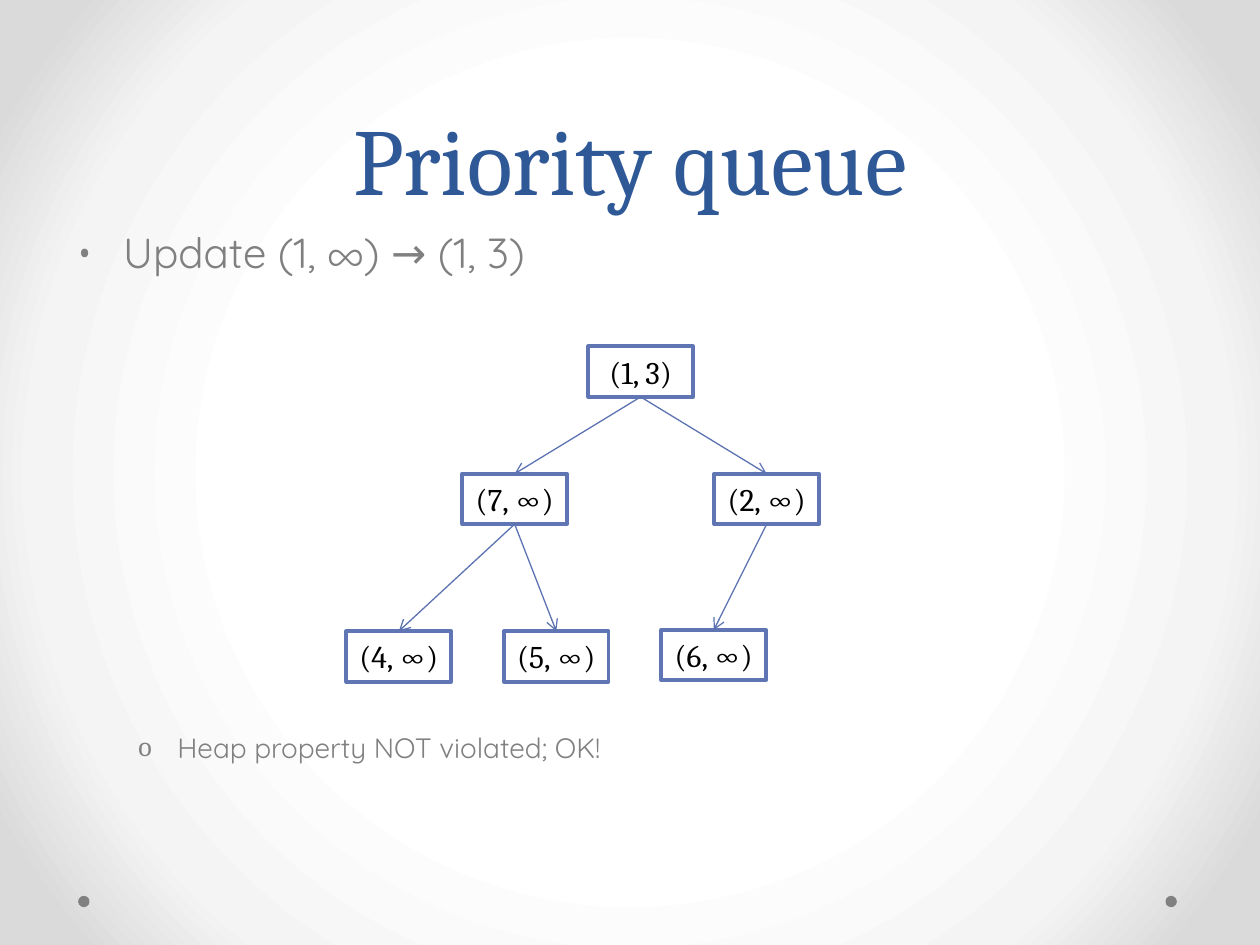
"""Build the priority queue slide with its heap drawn as a tree."""
from dataclasses import dataclass

from pptx import Presentation
from pptx.dml.color import RGBColor
from pptx.enum.shapes import MSO_CONNECTOR, MSO_SHAPE
from pptx.enum.text import MSO_ANCHOR, PP_ALIGN
from pptx.oxml import parse_xml
from pptx.oxml.ns import nsdecls
from pptx.oxml.xmlchemy import OxmlElement
from pptx.util import Inches, Pt

NODE_WIDTH, NODE_HEIGHT = 0.83, 0.4
TITLE = {"name": "Cambria", "size": Pt(54), "color": "2F5897"}
BULLET = {"name": "Quicksand", "size": Pt(24), "color": "808080"}
DETAIL = BULLET | {"size": Pt(16)}
LABEL = {"name": "Cambria", "size": Pt(18), "color": "000000"}
GRADIENT_STOPS = {50: "FFFFFF", 76: "F4F4F4", 92: "DADADA"}


@dataclass(frozen=True)
class Node:
    """A heap entry with its left and top in inches."""
    label: str
    left: float
    top: float

    @property
    def center(self) -> float:
        """Horizontal middle of the node."""
        return self.left + NODE_WIDTH / 2


ROOT = Node("(1, 3)", 4.67, 2.75)
SEVEN = Node("(7, ∞)", 3.67, 3.76)
TWO = Node("(2, ∞)", 5.67, 3.76)
FOUR = Node("(4, ∞)", 2.75, 5.01)
FIVE = Node("(5, ∞)", 4, 5.01)
SIX = Node("(6, ∞)", 5.25, 5)
NODES = (ROOT, SEVEN, TWO, FOUR, FIVE, SIX)
EDGES = ((ROOT, SEVEN), (ROOT, TWO), (SEVEN, FOUR), (SEVEN, FIVE), (TWO, SIX))


def rgb(value: str) -> RGBColor:
    """Turn a hex string into a colour."""
    return RGBColor.from_string(value)


def apply_format(font, values: dict) -> None:
    """Set font attributes from a dict of format values."""
    for name, value in values.items():
        if name == "color":
            font.color.rgb = rgb(value)
        else:
            setattr(font, name, value)


def set_background(slide) -> None:
    """Fill the background with a gradient spreading from the centre."""
    stops = "".join(
        f'<a:gs pos="{position * 1000}"><a:srgbClr val="{color}"/></a:gs>'
        for position, color in GRADIENT_STOPS.items())
    background = parse_xml(
        f'<p:bg {nsdecls("p", "a")}><p:bgPr><a:gradFill rotWithShape="1">'
        f'<a:gsLst>{stops}</a:gsLst><a:path path="circle">'
        '<a:fillToRect l="50000" t="50000" r="50000" b="50000"/></a:path>'
        '</a:gradFill><a:effectLst/></p:bgPr></p:bg>')
    slide.background._cSld.insert(0, background)


def add_title(slide, text: str) -> None:
    """Place and format the title placeholder."""
    title = slide.shapes.title
    title.left, title.top = Inches(0.5), Inches(0)
    title.width, title.height = Inches(9), Inches(1.75)
    frame = title.text_frame
    frame.text = text
    frame.vertical_anchor = MSO_ANCHOR.BOTTOM
    para = frame.paragraphs[0]
    para.alignment = PP_ALIGN.CENTER
    para.line_spacing = Pt(58)
    apply_format(para.runs[0].font, TITLE)


def format_bullet(para, text: str, mark: str, margin: float, hanging: float, values: dict) -> None:
    """Write a paragraph with a hanging bullet."""
    properties = para._p.get_or_add_pPr()
    properties.set("marL", str(Inches(margin)))
    properties.set("indent", str(-Inches(hanging)))
    for tag, key, value in (("a:buFont", "typeface", "Cambria"), ("a:buChar", "char", mark)):
        element = OxmlElement(tag)
        element.set(key, value)
        properties.append(element)
    span = para.add_run()
    span.text = text
    apply_format(span.font, values)


def add_body(slide) -> None:
    """Add the statement above the tree and the remark below it."""
    box = slide.shapes.add_textbox(Inches(0.5), Inches(1.75), Inches(9), Inches(4.95))
    frame = box.text_frame
    frame.word_wrap = True
    format_bullet(frame.paragraphs[0], "Update (1, ∞) → (1, 3)", "•", 0.38, 0.38, BULLET)
    remark = frame.add_paragraph()
    remark.level = 1
    remark.space_before = Inches(3.6)
    format_bullet(remark, "Heap property NOT violated; OK!", "o", 0.81, 0.31, DETAIL)


def add_node(slide, node: Node) -> None:
    """Draw one heap entry as a framed box."""
    box = slide.shapes.add_shape(MSO_SHAPE.RECTANGLE, Inches(node.left), Inches(node.top),
                                 Inches(NODE_WIDTH), Inches(NODE_HEIGHT))
    box.shadow.inherit = False
    box.fill.solid()
    box.fill.fore_color.rgb = rgb("FFFFFF")
    box.line.color.rgb = rgb("6076B4")
    box.line.width = Pt(2.25)
    frame = box.text_frame
    frame.text = node.label
    para = frame.paragraphs[0]
    para.alignment = PP_ALIGN.CENTER
    apply_format(para.runs[0].font, LABEL)


def add_edge(slide, parent: Node, child: Node) -> None:
    """Draw an arrow from a parent down to its child."""
    edge = slide.shapes.add_connector(
        MSO_CONNECTOR.STRAIGHT, Inches(parent.center), Inches(parent.top + NODE_HEIGHT),
        Inches(child.center), Inches(child.top))
    edge.line.color.rgb = rgb("5C72B2")
    edge.line.width = Pt(0.75)
    head = OxmlElement("a:tailEnd")
    head.set("type", "arrow")
    edge.line._get_or_add_ln().append(head)
    edge._element.spPr.append(OxmlElement("a:effectLst"))


def add_dot(slide, left: float) -> None:
    """Draw a small grey dot near the bottom edge."""
    dot = slide.shapes.add_shape(MSO_SHAPE.OVAL, Inches(left), Inches(7.11),
                                 Inches(0.09), Inches(0.09))
    dot.shadow.inherit = False
    dot.fill.solid()
    dot.fill.fore_color.rgb = rgb("808080")
    dot.line.fill.background()


def main() -> None:
    """Build and save the deck."""
    deck = Presentation()
    deck.slide_width, deck.slide_height = Inches(10), Inches(7.5)
    page = deck.slides.add_slide(deck.slide_layouts[5])
    set_background(page)
    for left in (9.25, 0.62):
        add_dot(page, left)
    add_title(page, "Priority queue")
    add_body(page)
    for node in NODES:
        add_node(page, node)
    for parent, child in EDGES:
        add_edge(page, parent, child)
    deck.save("out.pptx")


if __name__ == "__main__":
    main()
